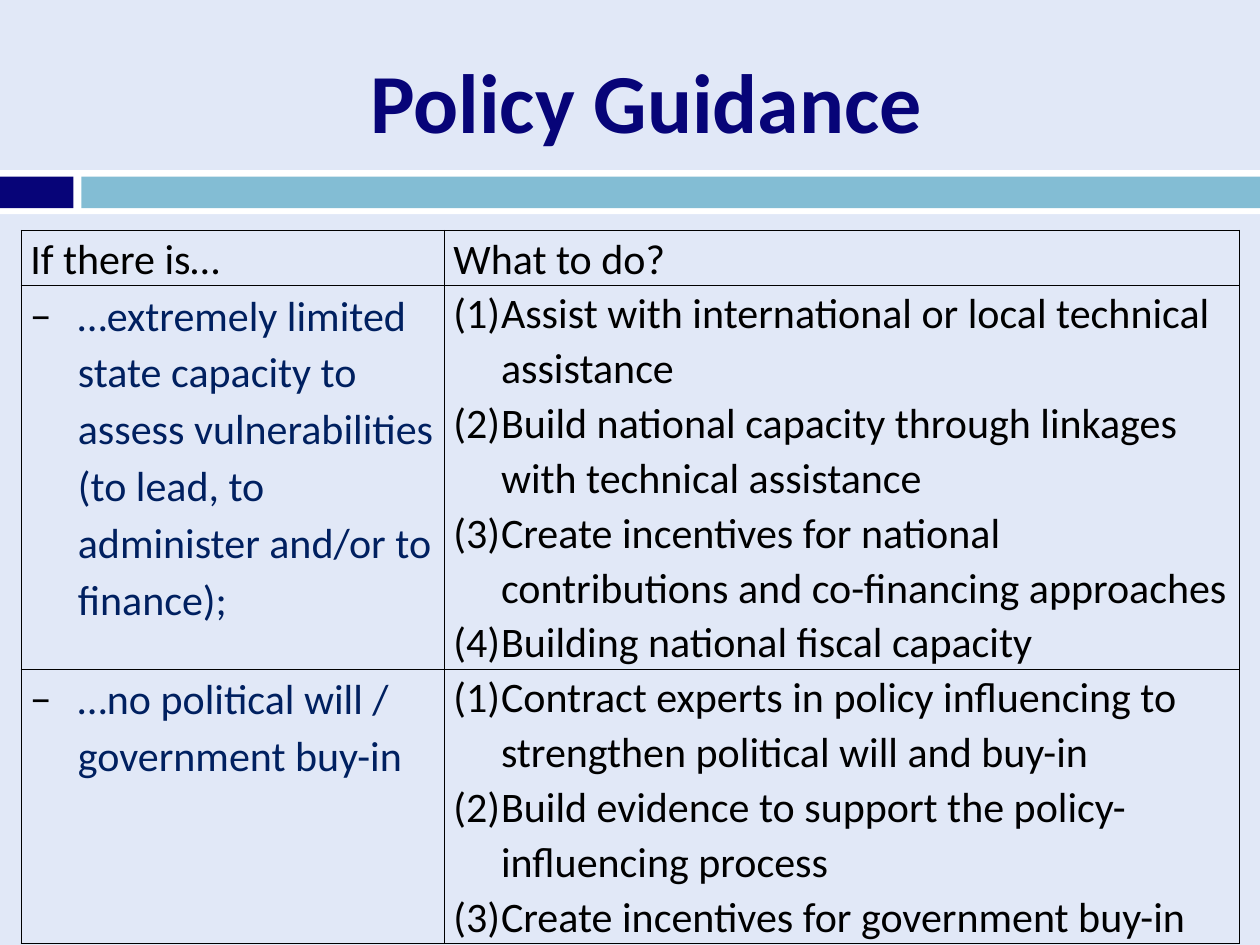
import pptx
import pptx.util
import pptx.dml.color
import pptx.enum.shapes
import pptx.enum.text
import pptx.oxml.ns
import lxml.etree
from dataclasses import dataclass

Cm, Pt = pptx.util.Cm, pptx.util.Pt

TITLE = "Policy Guidance"
HEADINGS = ("If there is…", "What to do?")
GUIDANCE = [
    ("…extremely limited state capacity to assess vulnerabilities "
     "(to lead, to administer and/or to finance);",
     ["Assist with international or local technical assistance",
      "Build national capacity through linkages with technical assistance",
      "Create incentives for national contributions and co-financing approaches",
      "Building national fiscal capacity"]),
    ("…no political will / government buy-in",
     ["Contract experts in policy influencing to strengthen political will and buy-in",
      "Build evidence to support the policy-influencing process",
      "Create incentives for government buy-in"]),
]


@dataclass(frozen=True)
class Theme:
    font: str = "Calibri"
    title_size: int = 48
    body_size: int = 24
    background: str = "E1E8F7"
    white: str = "FFFFFF"
    navy: str = "070478"
    sky: str = "83BDD4"
    situation: str = "002060"
    ink: str = "000000"
    border: float = 1


THEME = Theme()
WIDTH, HEIGHT = 25.4, 19.05
# left, top, width, height in cm
TITLE_BOX = (1.7, 0.64, 22.66, 2.74)
BANDS = [((0, 3.43, WIDTH, 0.89), THEME.white),
         ((0, 3.56, 1.48, 0.64), THEME.navy),
         ((1.64, 3.56, WIDTH - 1.64, 0.64), THEME.sky)]
TABLE_LEFT, TABLE_TOP = 0.43, 4.65
COLUMNS = (8.53, 16.03)
ROWS = (1.04, 7.54, 5.38)
CELL_INSET = 0.18
HANGING_INDENT = 0.96


def rgb(value):
    return pptx.dml.color.RGBColor.from_string(value)


def add_child(parent, tag, **attributes):
    child = lxml.etree.SubElement(parent, pptx.oxml.ns.qn(tag))
    for key, value in attributes.items():
        child.set(key, str(value))
    return child


def add_run(paragraph, text, size, color, bold=False):
    run = paragraph.add_run()
    run.text = text
    run.font.name = THEME.font
    run.font.size = Pt(size)
    run.font.bold = bold
    run.font.color.rgb = rgb(color)


def hang(paragraph):
    properties = paragraph._p.get_or_add_pPr()
    properties.set("marL", str(Cm(HANGING_INDENT)))
    properties.set("indent", str(-Cm(HANGING_INDENT)))
    return properties


def add_title(slide):
    title = slide.shapes.title
    title.left, title.top, title.width, title.height = map(Cm, TITLE_BOX)
    title.text_frame.vertical_anchor = pptx.enum.text.MSO_ANCHOR.MIDDLE
    paragraph = title.text_frame.paragraphs[0]
    paragraph.alignment = pptx.enum.text.PP_ALIGN.CENTER
    add_run(paragraph, TITLE, THEME.title_size, THEME.navy, bold=True)


def add_bands(slide):
    for box, color in BANDS:
        band = slide.shapes.add_shape(
            pptx.enum.shapes.MSO_SHAPE.RECTANGLE, *map(Cm, box))
        band.shadow.inherit = False
        band.fill.solid()
        band.fill.fore_color.rgb = rgb(color)
        band.line.fill.background()


def format_cell(cell):
    cell.margin_left = cell.margin_right = Cm(CELL_INSET)
    cell.margin_top = cell.margin_bottom = 0
    properties = cell._tc.get_or_add_tcPr()
    for side in ("a:lnL", "a:lnR", "a:lnT", "a:lnB"):
        line = add_child(properties, side, w=Pt(THEME.border))
        add_child(add_child(line, "a:solidFill"), "a:srgbClr", val=THEME.ink)
    cell.fill.background()


def write_heading(cell, text):
    paragraph = cell.text_frame.paragraphs[0]
    paragraph.line_spacing = 1.07
    add_run(paragraph, text, THEME.body_size, THEME.ink)


def write_situation(cell, text):
    paragraph = cell.text_frame.paragraphs[0]
    paragraph.line_spacing = 1.11
    paragraph.space_after = Pt(2.4)
    properties = hang(paragraph)
    add_child(add_child(properties, "a:buClr"), "a:srgbClr", val=THEME.ink)
    add_child(properties, "a:buFont", typeface=THEME.font)
    add_child(properties, "a:buChar", char="−")
    add_run(paragraph, text, THEME.body_size, THEME.situation)


def write_actions(cell, actions):
    frame = cell.text_frame
    for index, action in enumerate(actions):
        paragraph = frame.add_paragraph() if index else frame.paragraphs[0]
        paragraph.line_spacing = 1.07
        properties = hang(paragraph)
        add_child(properties, "a:buFont", typeface=THEME.font)
        add_child(properties, "a:buAutoNum", type="arabicParenBoth")
        add_run(paragraph, action, THEME.body_size, THEME.ink)


def add_guidance_table(slide):
    table = slide.shapes.add_table(
        len(ROWS), len(COLUMNS), Cm(TABLE_LEFT), Cm(TABLE_TOP),
        Cm(sum(COLUMNS)), Cm(sum(ROWS))).table
    table.first_row = table.horz_banding = False
    for column, width in zip(table.columns, COLUMNS):
        column.width = Cm(width)
    for row, height in zip(table.rows, ROWS):
        row.height = Cm(height)
    for cell in table.iter_cells():
        format_cell(cell)
    for column, heading in enumerate(HEADINGS):
        write_heading(table.cell(0, column), heading)
    for row, (situation, actions) in enumerate(GUIDANCE, start=1):
        write_situation(table.cell(row, 0), situation)
        write_actions(table.cell(row, 1), actions)


def main():
    presentation = pptx.Presentation()
    presentation.slide_width, presentation.slide_height = Cm(WIDTH), Cm(HEIGHT)
    slide = presentation.slides.add_slide(
        presentation.slide_layouts.get_by_name("Title Only"))
    slide.background.fill.solid()
    slide.background.fill.fore_color.rgb = rgb(THEME.background)
    add_bands(slide)
    add_title(slide)
    add_guidance_table(slide)
    presentation.save("out.pptx")


if __name__ == "__main__":
    main()
